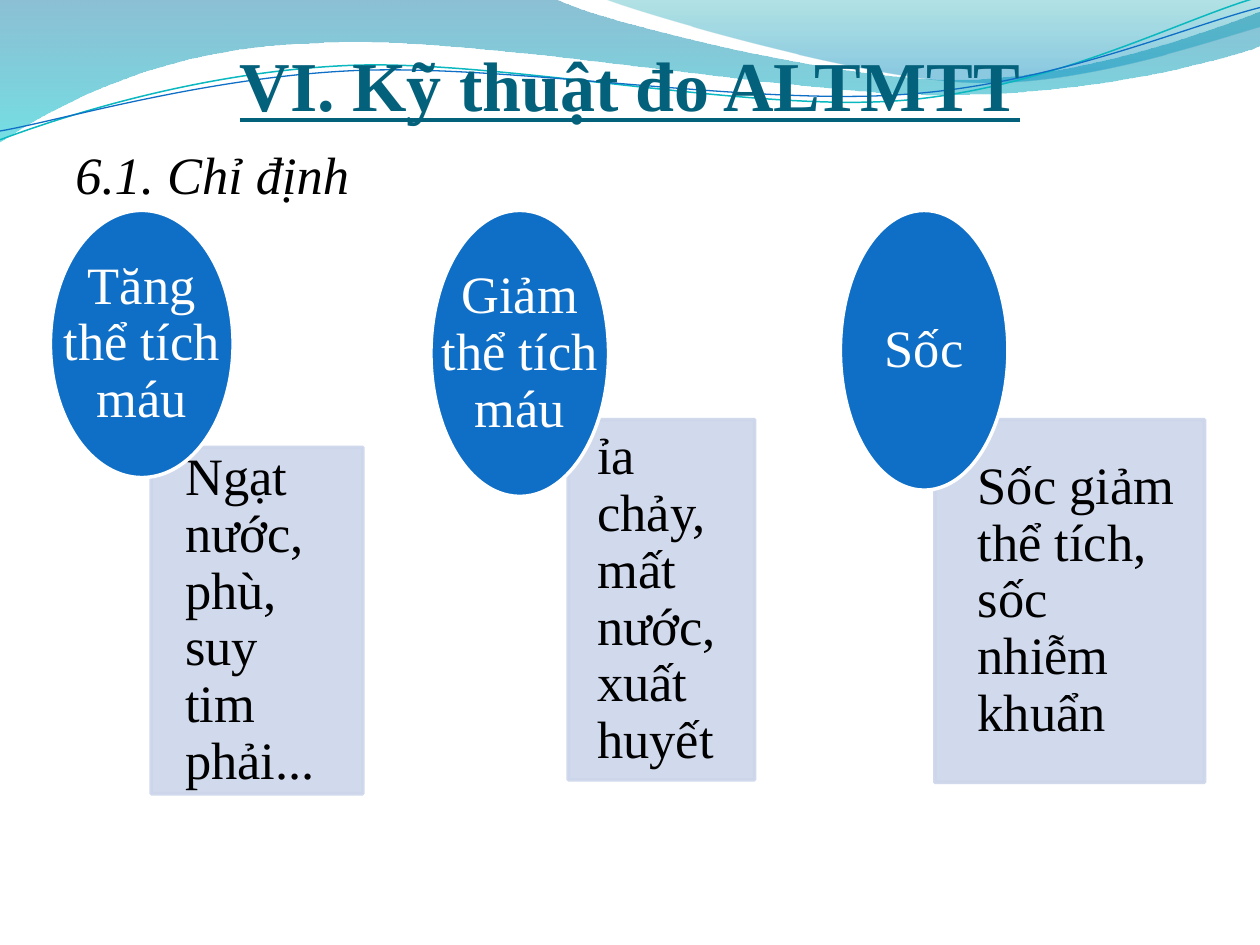
from dataclasses import dataclass
from typing import Optional

from lxml import etree
from pptx import Presentation
from pptx import util as u
from pptx.dml import color
from pptx.enum import shapes, text
from pptx.oxml import ns

FONT = "Times New Roman"
HEX = {
    "title": "04617B", "ink": "000000", "white": "FFFFFF",
    "oval": "0F6FC6", "card": "CCD5EA", "teal": "0AB8BF",
    "sea": "0074A1", "aqua": "00C6CF", "green": "00A1A9", "sky": "008BBF",
}
Point = tuple[float, float]
Box = tuple[float, float, float, float]


@dataclass
class Stop:
    pos: float
    hue: str
    alpha: int


@dataclass
class Wave:
    """A start point, then steps of one point (line) or three (curve)."""
    start: Point
    steps: list[tuple[Point, ...]]
    stops: Optional[tuple[Stop, Stop]] = None
    hue: str = ""
    width: float = 0


@dataclass
class Case:
    name: str
    oval: Box
    note: str
    card: Box
    indent: float


WAVES = [
    Wave((0, 0), [
        ((4.4, -0.01),),
        ((4.76, 0.17), (6.64, 0.63), (7.58, 0.63)),
        ((8.53, 0.63), (9.58, 0.26), (10, 0.09)),
        ((10.01, 0.36),),
        ((9.83, 0.44), (8.7, 0.76), (7.46, 0.75)),
        ((6.22, 0.75), (3.82, 0.28), (2.57, 0.34)),
        ((1.29, 0.36), (0.46, 0.83), (-0.01, 1.13)),
    ], stops=(Stop(0, "sea", 45), Stop(1, "aqua", 55))),
    Wave((4.79, -0.01), [
        ((5.09, 0.11), (6.82, 0.62), (7.69, 0.65)),
        ((8.56, 0.69), (9.61, 0.32), (10, 0.21)),
        ((10, 0),),
    ], stops=(Stop(0, "green", 30), Stop(0.8, "sky", 45))),
    Wave((0, 1.11), [
        ((0.48, 0.93), (1.58, 0.57), (2.77, 0.52)),
        ((3.95, 0.47), (5.93, 0.89), (7.13, 0.8)),
        ((8.33, 0.71), (9.38, 0.15), (9.98, -0.02)),
    ], hue="teal", width=0.85),
    Wave((0, 1.04), [
        ((0.47, 0.96), (1.64, 0.61), (2.83, 0.56)),
        ((4.03, 0.51), (5.97, 0.84), (7.17, 0.75)),
        ((8.36, 0.67), (9.41, 0.21), (10, 0.06)),
    ], hue="oval", width=0.75),
]

CASES = [
    Case("Tăng thể tích máu", (0.4, 1.67, 1.45, 2.12),
         "Ngạt nước, phù, suy tim phải...", (1.2, 3.55, 1.68, 2.75), 0.27),
    Case("Giảm thể tích máu", (3.42, 1.67, 1.41, 2.27),
         "ỉa chảy, mất nước, xuất huyết", (4.51, 3.33, 1.48, 2.86), 0.23),
    Case("Sốc", (6.67, 1.67, 1.33, 2.22),
         "Sốc giảm thể tích, sốc nhiễm khuẩn", (7.42, 3.33, 2.14, 2.88), 0.34),
]


def rgb(hue: str) -> color.RGBColor:
    return color.RGBColor.from_string(HEX[hue])


def fade(node, alpha: int) -> None:
    """Set the opacity, in percent, of each colour under the node."""
    for clr in node.iter(ns.qn("a:srgbClr")):
        etree.SubElement(clr, ns.qn("a:alpha")).set("val", str(alpha * 1000))


def bend(shape, steps: list[tuple[Point, ...]]) -> None:
    """Join the line segments of each three-point step into one curve."""
    lines = iter(list(shape._element.spPr.iter(ns.qn("a:lnTo"))))
    for step in steps:
        parts = [next(lines) for _ in step]
        if len(parts) == 1:
            continue
        curve = etree.Element(ns.qn("a:cubicBezTo"))
        parts[0].addprevious(curve)
        for part in parts:
            curve.append(part[0])
            part.getparent().remove(part)


def draw_wave(slide, wave: Wave) -> None:
    dots = [(u.Inches(x), u.Inches(y))
            for step in [(wave.start,), *wave.steps] for x, y in step]
    pen = slide.shapes.build_freeform(*dots[0], scale=1.0)
    pen.add_line_segments(dots[1:], close=bool(wave.stops))
    shape = pen.convert_to_shape()
    bend(shape, wave.steps)
    shape.shadow.inherit = False
    if not wave.stops:
        shape.fill.background()
        shape.line.color.rgb = rgb(wave.hue)
        shape.line.width = u.Pt(wave.width)
        return
    shape.line.fill.background()
    shape.fill.gradient()
    shape.fill.gradient_angle = 270
    nodes = list(shape._element.spPr.iter(ns.qn("a:gs")))
    for mark, stop, node in zip(shape.fill.gradient_stops, wave.stops, nodes):
        mark.position = stop.pos
        mark.color.rgb = rgb(stop.hue)
        fade(node, stop.alpha)


def draw_shape(group, kind, box: Box, fill: str, line: str, alpha: int = 100) -> None:
    shape = group.shapes.add_shape(kind, *map(u.Inches, box))
    shape.shadow.inherit = False
    shape.fill.solid()
    shape.fill.fore_color.rgb = rgb(fill)
    shape.line.color.rgb = rgb(line)
    shape.line.width = u.Pt(2)
    if alpha < 100:
        fade(shape._element.spPr, alpha)


def write(shape, words: str, hue: str, size: float = 30, inset: Box = (0, 0, 0, 0),
          align=text.PP_ALIGN.LEFT, anchor=text.MSO_ANCHOR.MIDDLE):
    """Fill a text frame with one run; return its paragraph and run."""
    frame = shape.text_frame
    frame.word_wrap = True
    frame.auto_size = text.MSO_AUTO_SIZE.NONE
    frame.vertical_anchor = anchor
    (frame.margin_left, frame.margin_top,
     frame.margin_right, frame.margin_bottom) = map(u.Inches, inset)
    para = frame.paragraphs[0]
    para.alignment = align
    run = para.add_run()
    run.text = words
    run.font.name, run.font.size = FONT, u.Pt(size)
    run.font.color.rgb = rgb(hue)
    return para, run


def draw_case(group, case: Case) -> None:
    kinds = shapes.MSO_SHAPE
    left, top, width, height = case.card
    area = (left + case.indent, top, width - case.indent, height)
    draw_shape(group, kinds.RECTANGLE, case.card, "card", "card", 90)
    note = group.shapes.add_textbox(*map(u.Inches, area))
    para, _ = write(note, case.note, "ink", inset=(0, 0.23, 0.23, 0.23))
    para.line_spacing = 0.9
    draw_shape(group, kinds.OVAL, case.oval, "oval", "white")
    name = group.shapes.add_textbox(*map(u.Inches, case.oval))
    para, _ = write(name, case.name, "white", align=text.PP_ALIGN.CENTER)
    para.line_spacing = 0.9


def main() -> None:
    deck = Presentation()
    deck.slide_width, deck.slide_height = u.Inches(10), u.Inches(7.5)
    slide = deck.slides.add_slide(deck.slide_layouts[5])
    for wave in WAVES:
        draw_wave(slide, wave)

    title = slide.shapes.title
    title.left, title.top, title.width, title.height = map(u.Inches, (0.5, 0.25, 9, 0.75))
    slide.shapes._spTree.append(title._element)  # in front of the waves
    _, run = write(title, "VI. Kỹ thuật đo ALTMTT", "title", 40, (0, 0.05, 0, 0),
                   text.PP_ALIGN.CENTER, text.MSO_ANCHOR.BOTTOM)
    run.font.bold = run.font.underline = True

    head = slide.shapes.add_textbox(*map(u.Inches, (0.5, 1.08, 9, 5.83)))
    para, run = write(head, "6.1. Chỉ định", "ink", inset=(0.1, 0.05, 0.1, 0.05),
                      anchor=text.MSO_ANCHOR.TOP)
    para.space_before = u.Pt(5)
    run.font.italic = True

    group = slide.shapes.add_group_shape()
    for case in CASES:
        draw_case(group, case)
    deck.save("out.pptx")


if __name__ == "__main__":
    main()
